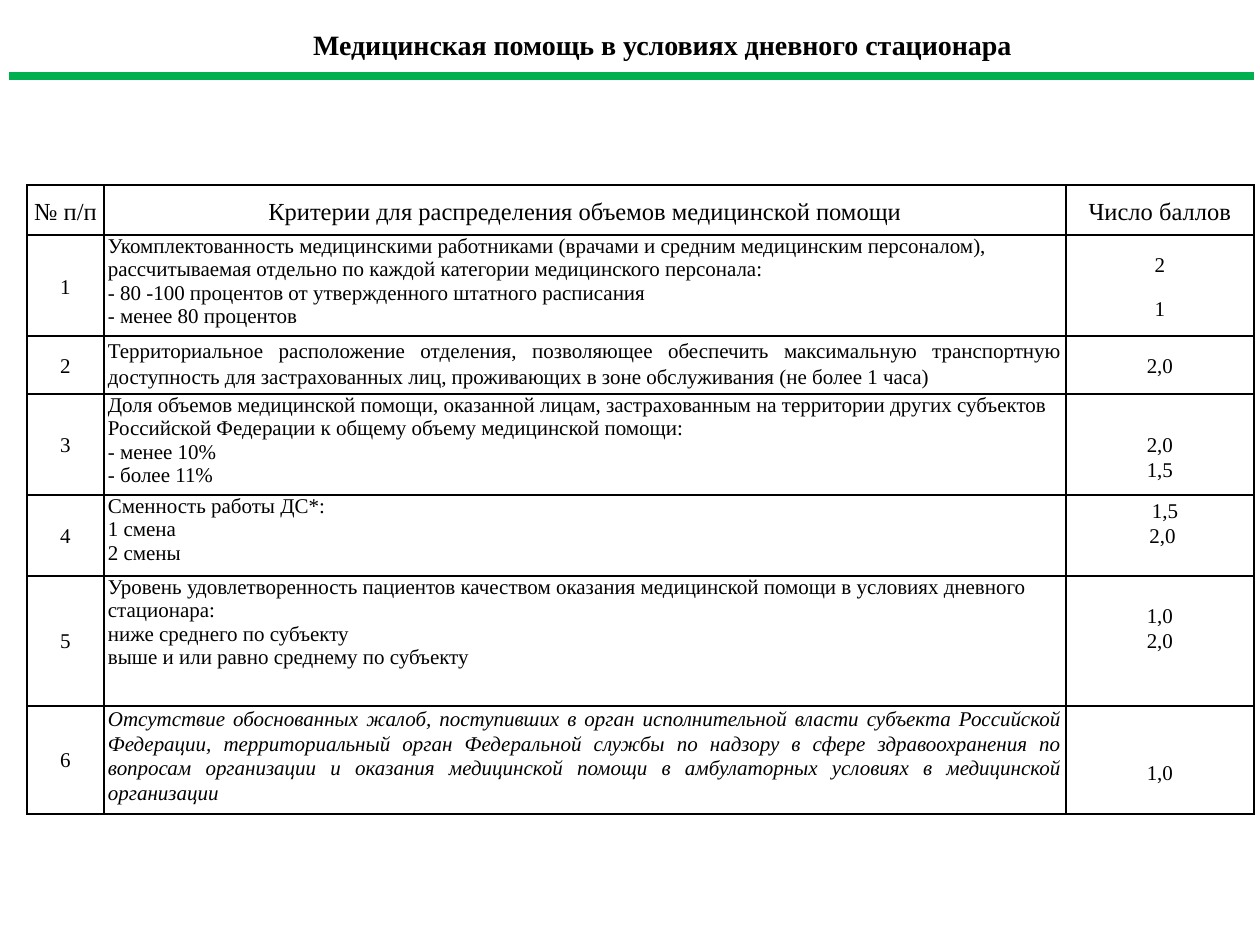
"""Build a slide with the scoring criteria for day hospital care."""
from lxml.etree import SubElement
from pptx import Presentation
from pptx.dml.color import RGBColor as RGB
from pptx.enum.shapes import MSO_CONNECTOR as CONN
from pptx.enum.text import MSO_ANCHOR as ANCHOR, PP_ALIGN as ALIGN
from pptx.oxml.ns import qn
from pptx.util import Pt

PX = 914400 / 126
COLORS = {"text": "000000", "border": "000000", "rule": "00B050"}
FONT = "Times New Roman"
TITLE = "Медицинская помощь в условиях дневного стационара"
TITLE_BOX = (15, 16, 1221, 49)
RULE = (9, 76, 1254, 76)
TABLE_AT = (27, 185)
COLS = (77, 962, 188)
ROWS = (50, 101, 58, 101, 81, 130, 108)
LINE = 25
INSET = 4
LOOSE = {"line_spacing": 1.15, "space_after": Pt(10)}
TIGHT = {"line_spacing": 1.07, "space_after": Pt(0)}
PLAIN = {"line_spacing": 1.0, "space_after": Pt(0)}
CENTER = {"alignment": ALIGN.CENTER}
LEFT = {"alignment": ALIGN.LEFT}
JUSTIFY = {"alignment": ALIGN.JUSTIFY}
HEADER = ["№ п/п", "Критерии для распределения объемов медицинской помощи", "Число баллов"]
CRITERIA = [
    {"text": ["Укомплектованность медицинскими работниками (врачами и средним медицинским "
              "персоналом), рассчитываемая отдельно по каждой категории медицинского персонала:",
              "- 80 -100 процентов от утвержденного штатного расписания",
              "- менее 80 процентов"],
     "scores": ["2", "1"], "spacing": LOOSE},
    {"text": ["Территориальное расположение отделения, позволяющее обеспечить максимальную "
              "транспортную доступность для застрахованных лиц, проживающих в зоне "
              "обслуживания (не более 1 часа)"],
     "scores": ["2,0"], "spacing": LOOSE, "para": {**JUSTIFY, **LOOSE}},
    {"text": ["Доля объемов медицинской помощи, оказанной лицам, застрахованным на территории "
              "других субъектов Российской Федерации к общему объему медицинской помощи:",
              "- менее 10%", "- более 11%"],
     "scores": ["2,0", "1,5"], "pad": (LINE, 0)},
    {"text": ["Сменность работы ДС*:", "1 смена", "2 смены"],
     "scores": ["1,5", "2,0"], "pad": (0, LINE), "indents": (10, 5)},
    {"text": ["Уровень удовлетворенность пациентов качеством оказания медицинской помощи в "
              "условиях дневного стационара:",
              "ниже среднего по субъекту", "выше и или равно среднему по субъекту"],
     "scores": ["1,0", "2,0"], "pad": (0, LINE)},
    {"text": ["Отсутствие обоснованных жалоб, поступивших в орган исполнительной власти "
              "субъекта Российской Федерации, территориальный орган Федеральной службы по "
              "надзору в сфере здравоохранения по вопросам организации и оказания медицинской "
              "помощи в амбулаторных условиях в медицинской организации"],
     "scores": ["1,0"], "pad": (LINE, 0), "para": {**JUSTIFY, **TIGHT},
     "font": {"italic": True}},
]


def px(n):
    return round(n * PX)


def set_all(obj, values):
    for name, value in values.items():
        setattr(obj, name, value)


def write(tf, lines, para, font):
    for i, line in enumerate(lines):
        p = tf.add_paragraph() if i else tf.paragraphs[0]
        set_all(p, para)
        r = p.add_run()
        r.text = line
        set_all(r.font, {"name": FONT, "size": Pt(12), **font})
        r.font.color.rgb = RGB.from_string(COLORS["text"])


def add_borders(cell):
    tcPr = cell._tc.get_or_add_tcPr()
    for side in ("a:lnL", "a:lnR", "a:lnT", "a:lnB"):
        ln = SubElement(tcPr, qn(side), w=str(Pt(1)))
        fill = SubElement(ln, qn("a:solidFill"))
        SubElement(fill, qn("a:srgbClr"), val=COLORS["border"])


def fill_cell(cell, lines, para, font=None, anchor=ANCHOR.MIDDLE, pad=(0, 0)):
    top, bottom = pad
    set_all(cell, {"margin_left": px(INSET), "margin_right": px(INSET),
                   "margin_top": px(top), "margin_bottom": px(bottom),
                   "vertical_anchor": anchor})
    add_borders(cell)
    cell.fill.background()
    write(cell.text_frame, lines, para, font or {})


def add_title(s):
    tf = s.shapes.add_textbox(*map(px, TITLE_BOX)).text_frame
    tf.word_wrap = True
    write(tf, [TITLE], {**CENTER, **LOOSE}, {"size": Pt(16), "bold": True})
    tf.paragraphs[0]._p.get_or_add_pPr().set("indent", str(px(74)))


def add_rule(s):
    line = s.shapes.add_connector(CONN.STRAIGHT, *map(px, RULE))
    line.line.color.rgb = RGB.from_string(COLORS["rule"])
    line.line.width = Pt(4.5)
    SubElement(line._element.spPr, qn("a:effectLst"))


def add_criteria(s):
    size = (sum(COLS), sum(ROWS))
    table = s.shapes.add_table(len(ROWS), len(COLS), *map(px, TABLE_AT + size)).table
    set_all(table, {"first_row": False, "horz_banding": False})
    for col, width in zip(table.columns, COLS):
        col.width = px(width)
    for row, height in zip(table.rows, ROWS):
        row.height = px(height)
    for c, name in enumerate(HEADER):
        fill_cell(table.cell(0, c), [name], {**CENTER, **LOOSE}, {"size": Pt(14)})
    for n, item in enumerate(CRITERIA, 1):
        number, text, score = (table.cell(n, c) for c in range(len(COLS)))
        centered = {**CENTER, **item.get("spacing", TIGHT)}
        fill_cell(number, [str(n)], centered)
        fill_cell(text, item["text"], item.get("para", {**LEFT, **PLAIN}),
                  item.get("font"), ANCHOR.TOP)
        fill_cell(score, item["scores"], centered, pad=item.get("pad", (0, 0)))
        for p, indent in zip(score.text_frame.paragraphs, item.get("indents", ())):
            p._p.get_or_add_pPr().set("marL", str(px(indent)))


def main():
    prs = Presentation()
    set_all(prs, {"slide_width": px(1260), "slide_height": px(945)})
    s = prs.slides.add_slide(prs.slide_layouts[6])
    add_title(s)
    add_criteria(s)
    add_rule(s)
    prs.save("out.pptx")


if __name__ == "__main__":
    main()
